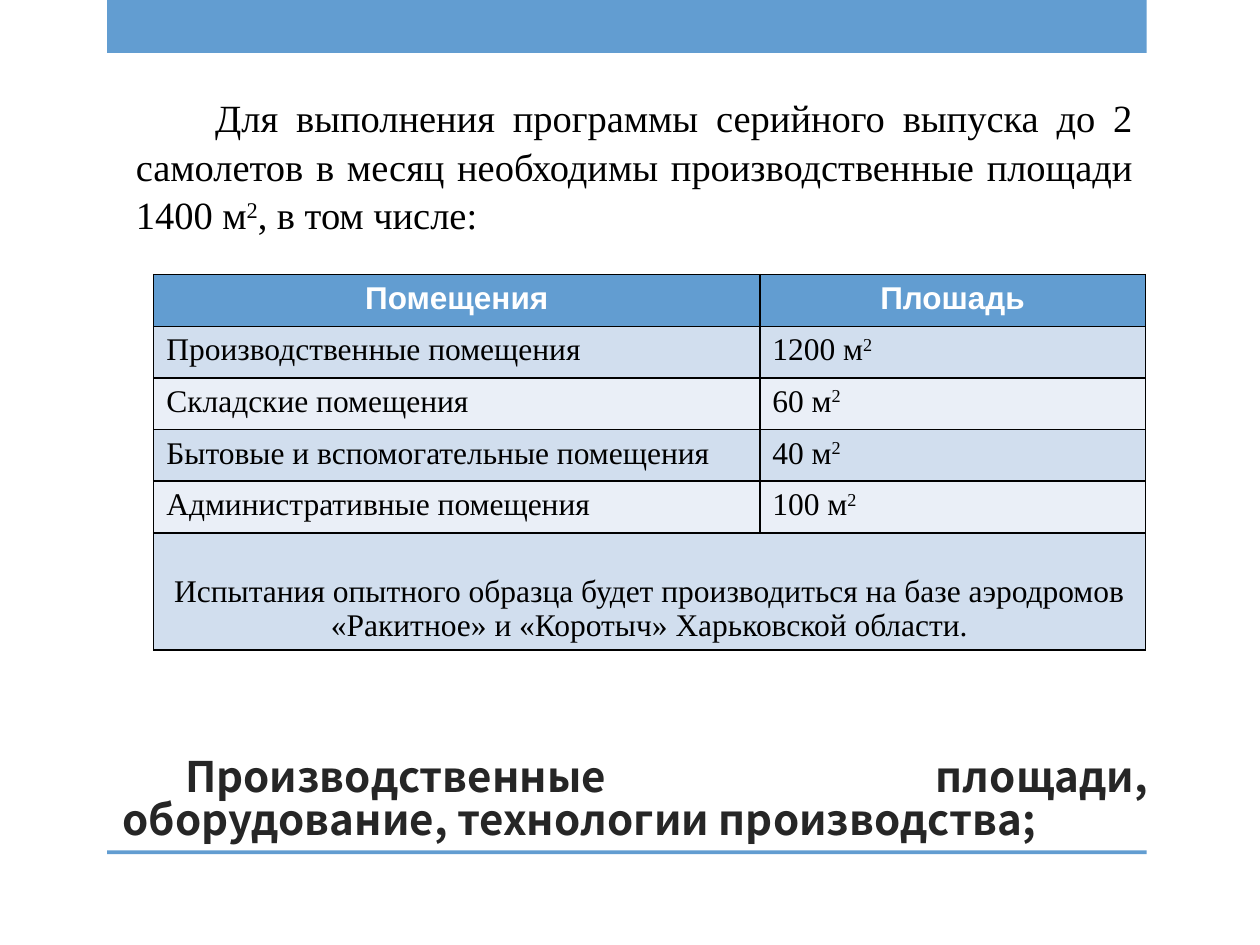
from lxml.etree import SubElement
from pptx import Presentation
from pptx.dml.color import RGBColor
from pptx.enum.shapes import MSO_SHAPE
from pptx.enum.text import MSO_ANCHOR, MSO_AUTO_SIZE, PP_ALIGN
from pptx.oxml.ns import qn
from pptx.util import Inches, Pt

BLUE = "629DD1"
SERIF = "Times New Roman"
ROWS = [
    ("Производственные помещения", "1200 м"),
    ("Складские помещения", "60 м"),
    ("Бытовые и вспомогательные помещения", "40 м"),
    ("Административные помещения", "100 м"),
]
NOTE = ("Испытания опытного образца будет производиться на базе аэродромов "
        "«Ракитное» и «Коротыч» Харьковской области.")
INTRO = ("Для выполнения программы серийного выпуска до 2 самолетов в месяц "
         "необходимы производственные площади 1400 м")
HEAD = {"name": "Arial", "size": Pt(18), "bold": True}
CELL = {"name": SERIF, "size": Pt(18), "bold": False}
BODY = {"name": SERIF, "size": Pt(22)}
TITLE = {"name": "Noto Sans CJK KR", "size": Pt(24), "bold": True}


def color(text):
    return RGBColor.from_string(text)


def paint(item, tone):
    item.fill.solid()
    item.fill.fore_color.rgb = color(tone)


def place(shape, *box):
    for name, size in zip(("left", "top", "width", "height"), box):
        setattr(shape, name, Inches(size))


def write(para, parts, form, tone="000000", align=PP_ALIGN.LEFT):
    para.alignment = align
    for index, part in enumerate(parts):
        run = para.add_run()
        run.text = part
        for name, value in form.items():
            setattr(run.font, name, value)
        run.font.color.rgb = color(tone)
        if index == 1:
            run._r.get_or_add_rPr().set("baseline", "30000")


def indent(para, size):
    para._p.get_or_add_pPr().set("indent", str(Inches(size)))


def add_bar(slide, top, height):
    bar = slide.shapes.add_shape(
        MSO_SHAPE.RECTANGLE, Inches(0.85), Inches(top), Inches(8.25), Inches(height))
    paint(bar, BLUE)
    bar.line.fill.background()
    bar.shadow.inherit = False


def add_title(slide):
    title = slide.shapes.title
    place(title, 0.87, 5.8, 8.34, 0.95)
    frame = title.text_frame
    frame.auto_size = MSO_AUTO_SIZE.NONE
    frame.word_wrap = True
    frame.vertical_anchor = MSO_ANCHOR.BOTTOM
    para = frame.paragraphs[0]
    para.line_spacing = 0.85
    write(para, ["Производственные площади, оборудование, технологии производства;"],
          TITLE, "262626", PP_ALIGN.JUSTIFY)
    indent(para, 0.5)


def add_intro(slide):
    box = slide.shapes.add_textbox(
        Inches(0.98), Inches(0.68), Inches(8.11), Inches(1.21))
    box.text_frame.word_wrap = True
    para = box.text_frame.paragraphs[0]
    para.line_spacing = 1.05
    write(para, [INTRO, "2", ", в том числе:"], BODY, align=PP_ALIGN.JUSTIFY)
    indent(para, 0.63)


def edge(cell):
    props = cell._tc.get_or_add_tcPr()
    for side in ("a:lnL", "a:lnR", "a:lnT", "a:lnB"):
        line = SubElement(props, qn(side), w=str(Pt(1)))
        fill = SubElement(line, qn("a:solidFill"))
        SubElement(fill, qn("a:srgbClr"), val="000000")


def fill_cell(cell, parts, form, back, **style):
    paint(cell, back)
    write(cell.text_frame.paragraphs[0], parts, form, **style)


def add_table(slide):
    count = len(ROWS) + 2
    table = slide.shapes.add_table(
        count, 2, Inches(1.22), Inches(2.18), Inches(7.87), Inches(2.96)).table
    for col, width in zip(table.columns, (4.81, 3.06)):
        col.width = Inches(width)
    for row in table.rows:
        row.height = Inches(0.41)
    table.rows[count - 1].height = Inches(0.93)
    for cell in table.iter_cells():
        edge(cell)
    for col, text in enumerate(("Помещения", "Плошадь")):
        fill_cell(table.cell(0, col), [text], HEAD, BLUE,
                  tone="FFFFFF", align=PP_ALIGN.CENTER)
    for row, (room, area) in enumerate(ROWS, 1):
        back = "D1DEEE" if row % 2 else "EAEFF7"
        fill_cell(table.cell(row, 0), [room], CELL, back)
        fill_cell(table.cell(row, 1), [area, "2"], CELL, back)
    last = table.cell(count - 1, 0)
    last.merge(table.cell(count - 1, 1))
    last.vertical_anchor = MSO_ANCHOR.BOTTOM
    fill_cell(last, [NOTE], CELL, "D1DEEE", align=PP_ALIGN.CENTER)


def main():
    deck = Presentation()
    deck.slide_width, deck.slide_height = Inches(10), Inches(7.5)
    slide = deck.slides.add_slide(deck.slide_layouts[5])
    add_bar(slide, 0, 0.42)
    add_bar(slide, 6.75, 0.03)
    add_title(slide)
    add_table(slide)
    add_intro(slide)
    deck.save("out.pptx")


if __name__ == "__main__":
    main()
